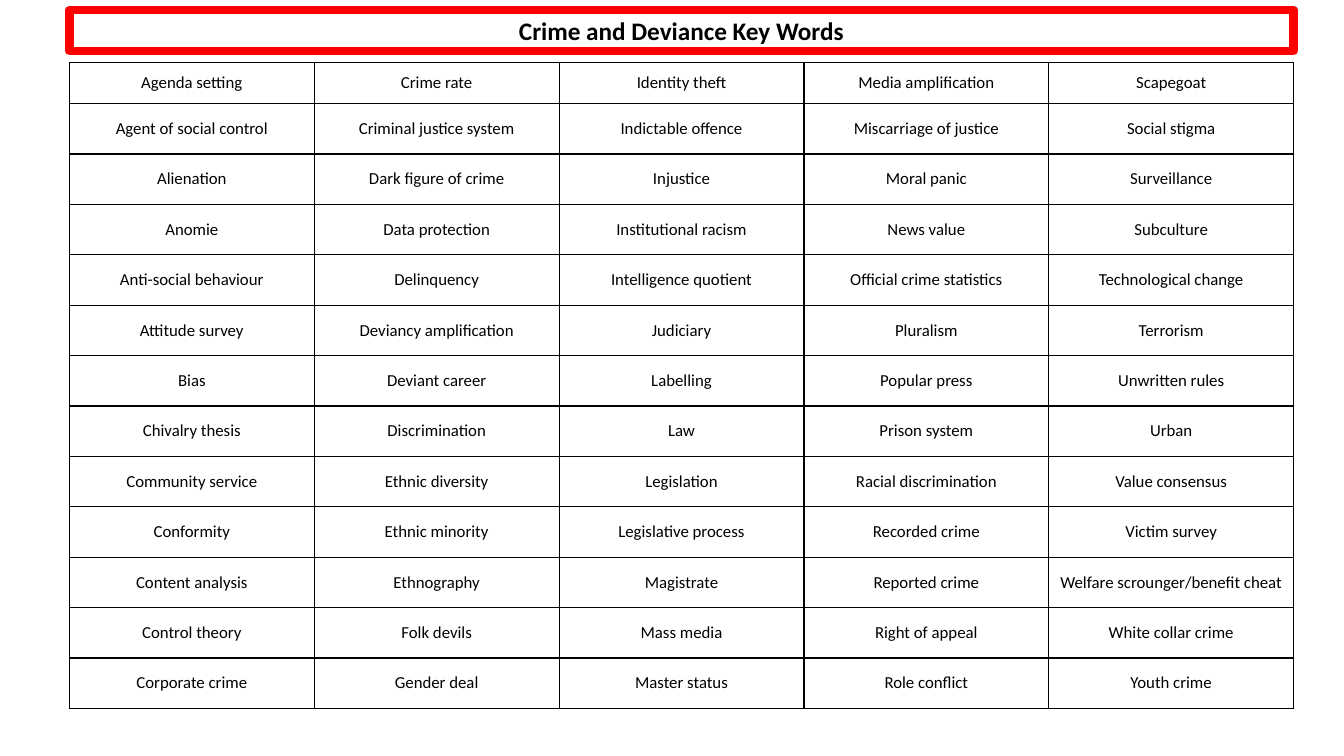
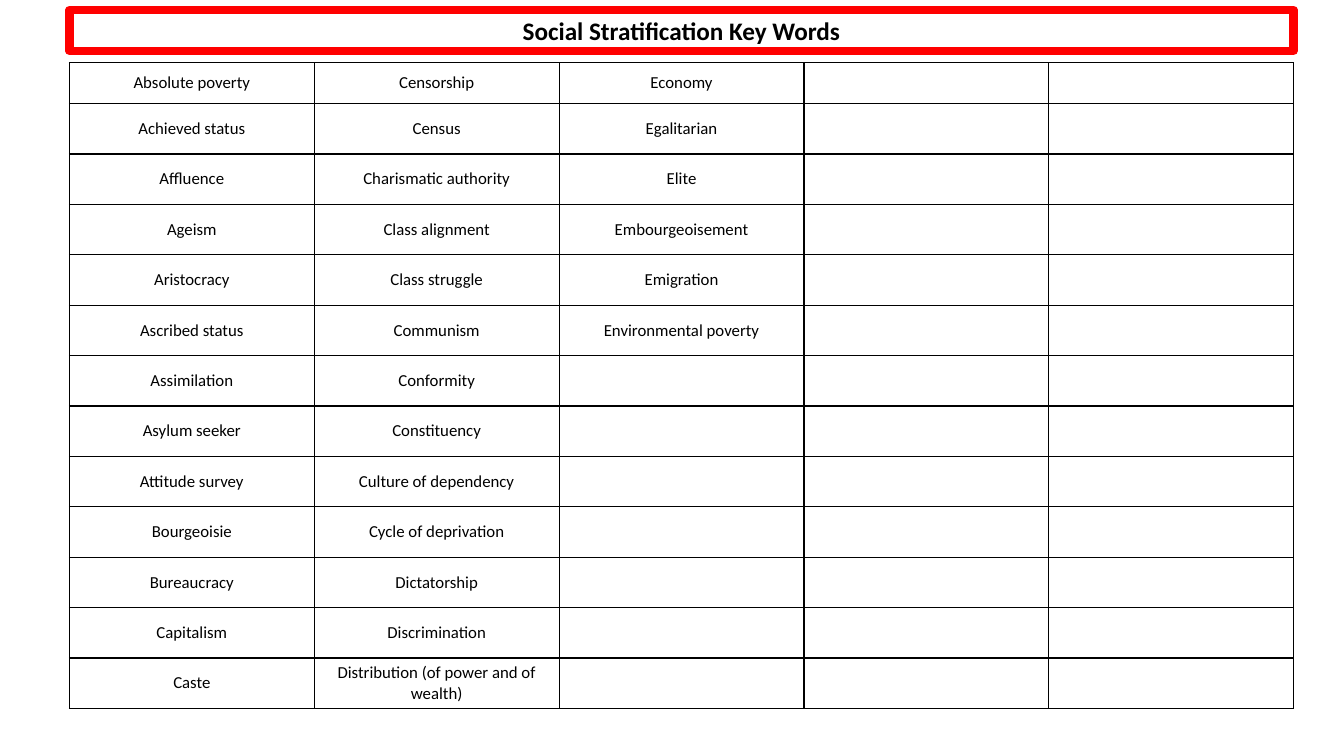
"""Build two key word slides, each with a framed title and a word grid."""
from lxml.etree import SubElement
from pptx import Presentation
from pptx.dml.color import RGBColor
from pptx.enum.text import MSO_ANCHOR, MSO_AUTO_SIZE, PP_ALIGN
from pptx.oxml.ns import qn
from pptx.util import Cm, Pt

BLACK = RGBColor(0x00, 0x00, 0x00)
WHITE = RGBColor(0xFF, 0xFF, 0xFF)
RED = RGBColor(0xFF, 0x00, 0x00)
FONT = "Calibri"

LEFT = Cm(1.75)
COLUMN_WIDTH = Cm(6.17)
COLUMNS, ROWS = 5, 13
WIDTH = COLUMN_WIDTH * COLUMNS
TITLE_TOP, TITLE_HEIGHT = Cm(0.25), Cm(1.03)
GRID_TOP = Cm(1.58)
FIRST_ROW_HEIGHT, ROW_HEIGHT = Cm(1.03), Cm(1.27)

CRIME_WORDS = [
    "Agenda setting", "Agent of social control", "Alienation", "Anomie",
    "Anti-social behaviour", "Attitude survey", "Bias", "Chivalry thesis",
    "Community service", "Conformity", "Content analysis", "Control theory",
    "Corporate crime",
    "Crime rate", "Criminal justice system", "Dark figure of crime",
    "Data protection", "Delinquency", "Deviancy amplification",
    "Deviant career", "Discrimination", "Ethnic diversity", "Ethnic minority",
    "Ethnography", "Folk devils", "Gender deal",
    "Identity theft", "Indictable offence", "Injustice",
    "Institutional racism", "Intelligence quotient", "Judiciary", "Labelling",
    "Law", "Legislation", "Legislative process", "Magistrate", "Mass media",
    "Master status",
    "Media amplification", "Miscarriage of justice", "Moral panic",
    "News value", "Official crime statistics", "Pluralism", "Popular press",
    "Prison system", "Racial discrimination", "Recorded crime",
    "Reported crime", "Right of appeal", "Role conflict",
    "Scapegoat", "Social stigma", "Surveillance", "Subculture",
    "Technological change", "Terrorism", "Unwritten rules", "Urban",
    "Value consensus", "Victim survey", "Welfare scrounger/benefit cheat",
    "White collar crime", "Youth crime",
]

STRATIFICATION_WORDS = [
    "Absolute poverty", "Achieved status", "Affluence", "Ageism",
    "Aristocracy", "Ascribed status", "Assimilation", "Asylum seeker",
    "Attitude survey", "Bourgeoisie", "Bureaucracy", "Capitalism", "Caste",
    "Censorship", "Census", "Charismatic authority", "Class alignment",
    "Class struggle", "Communism", "Conformity", "Constituency",
    "Culture of dependency", "Cycle of deprivation", "Dictatorship",
    "Discrimination", "Distribution (of power and of wealth)",
    "Economy", "Egalitarian", "Elite", "Embourgeoisement", "Emigration",
    "Environmental poverty",
]


def write_centred(para, text, size, bold=False):
    """Add one centred run of black text to a paragraph."""
    para.alignment = PP_ALIGN.CENTER
    span = para.add_run()
    span.text = text
    span.font.name = FONT
    span.font.size = Pt(size)
    span.font.bold = bold
    span.font.color.rgb = BLACK


def add_title(page, text):
    """Add the title in its red frame with rounded line joins."""
    box = page.shapes.add_textbox(LEFT, TITLE_TOP, WIDTH, TITLE_HEIGHT)
    box.line.color.rgb = RED
    box.line.width = Pt(6)
    SubElement(box.line.fill._xPr, qn("a:round"))
    frame = box.text_frame
    frame.word_wrap = True
    frame.auto_size = MSO_AUTO_SIZE.SHAPE_TO_FIT_TEXT
    write_centred(frame.paragraphs[0], text, 18, bold=True)


def add_borders(cell):
    """Draw a thin black line on all four sides of a cell."""
    properties = cell._tc.get_or_add_tcPr()
    for side in ("a:lnL", "a:lnR", "a:lnT", "a:lnB"):
        line = SubElement(properties, qn(side), w=str(Pt(1)))
        fill = SubElement(line, qn("a:solidFill"))
        SubElement(fill, qn("a:srgbClr"), val=str(BLACK))


def add_word_grid(page, words):
    """Add the table and fill it with words, column by column."""
    height = FIRST_ROW_HEIGHT + ROW_HEIGHT * (ROWS - 1)
    table = page.shapes.add_table(
        ROWS, COLUMNS, LEFT, GRID_TOP, WIDTH, height).table
    table.first_row = False
    table.horz_banding = False
    for column in table.columns:
        column.width = COLUMN_WIDTH
    for index, row in enumerate(table.rows):
        row.height = ROW_HEIGHT if index else FIRST_ROW_HEIGHT
    for position in range(ROWS * COLUMNS):
        column_index, row_index = divmod(position, ROWS)
        cell = table.cell(row_index, column_index)
        add_borders(cell)
        cell.fill.solid()
        cell.fill.fore_color.rgb = WHITE
        cell.vertical_anchor = MSO_ANCHOR.MIDDLE
        if position < len(words):
            write_centred(cell.text_frame.paragraphs[0], words[position], 12)


def add_key_word_page(deck, title, words):
    """Add one slide with a title and its key words."""
    page = deck.slides.add_slide(deck.slide_layouts[6])
    add_word_grid(page, words)
    add_title(page, title)


def main():
    """Build and save the deck."""
    deck = Presentation()
    deck.slide_width, deck.slide_height = Cm(33.87), Cm(19.05)
    add_key_word_page(deck, "Crime and Deviance Key Words", CRIME_WORDS)
    add_key_word_page(
        deck, "Social Stratification Key Words", STRATIFICATION_WORDS)
    deck.save("out.pptx")


if __name__ == "__main__":
    main()
